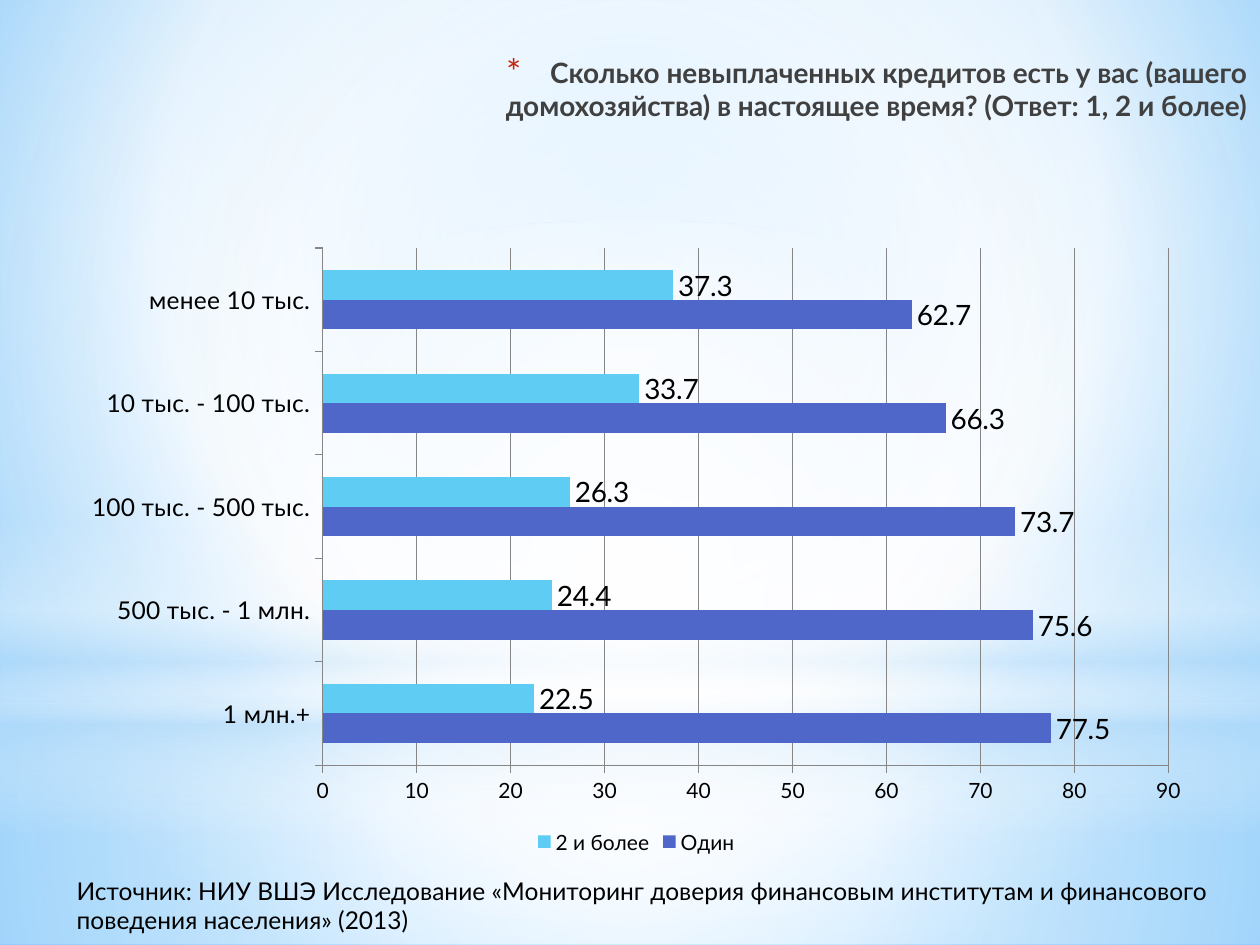
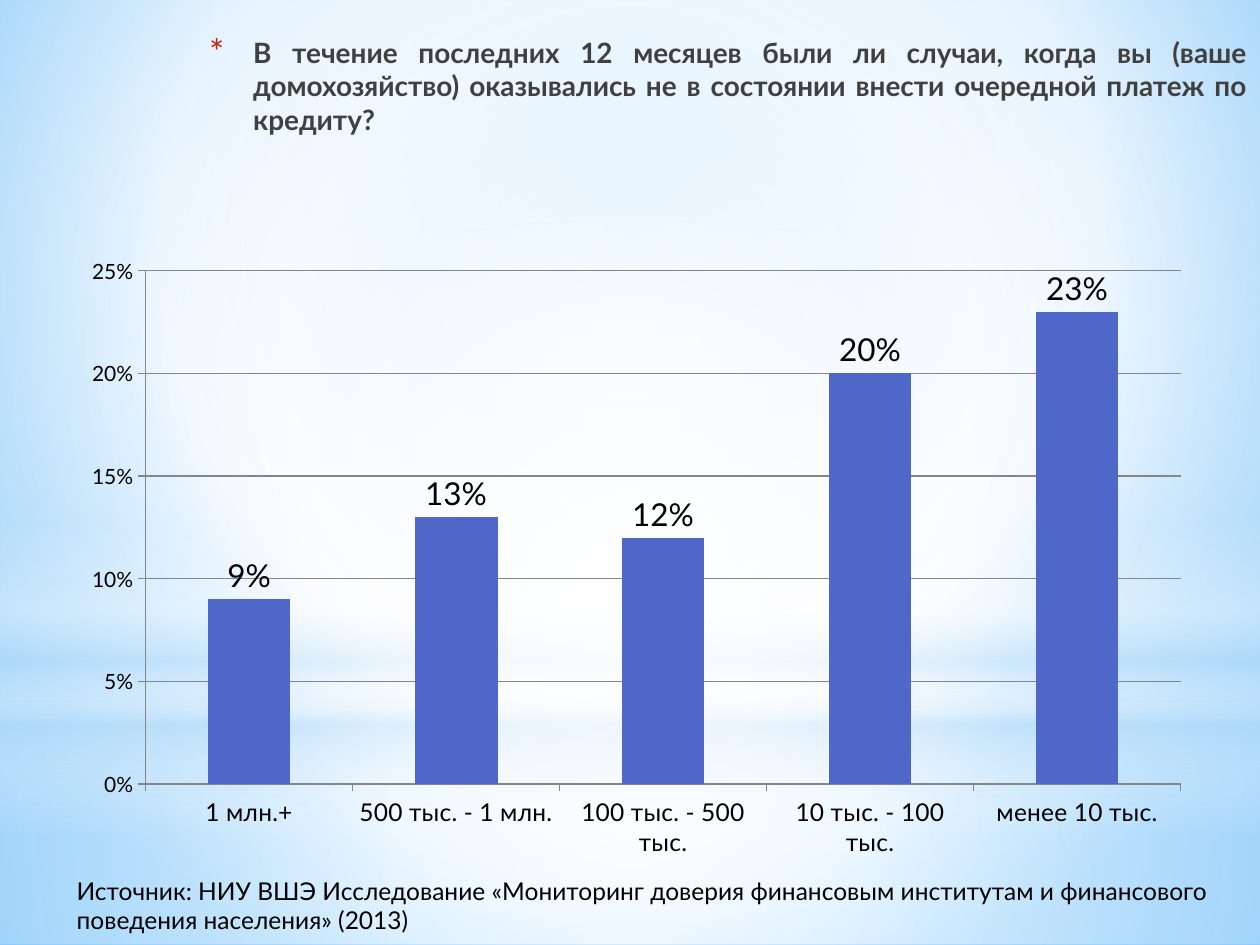
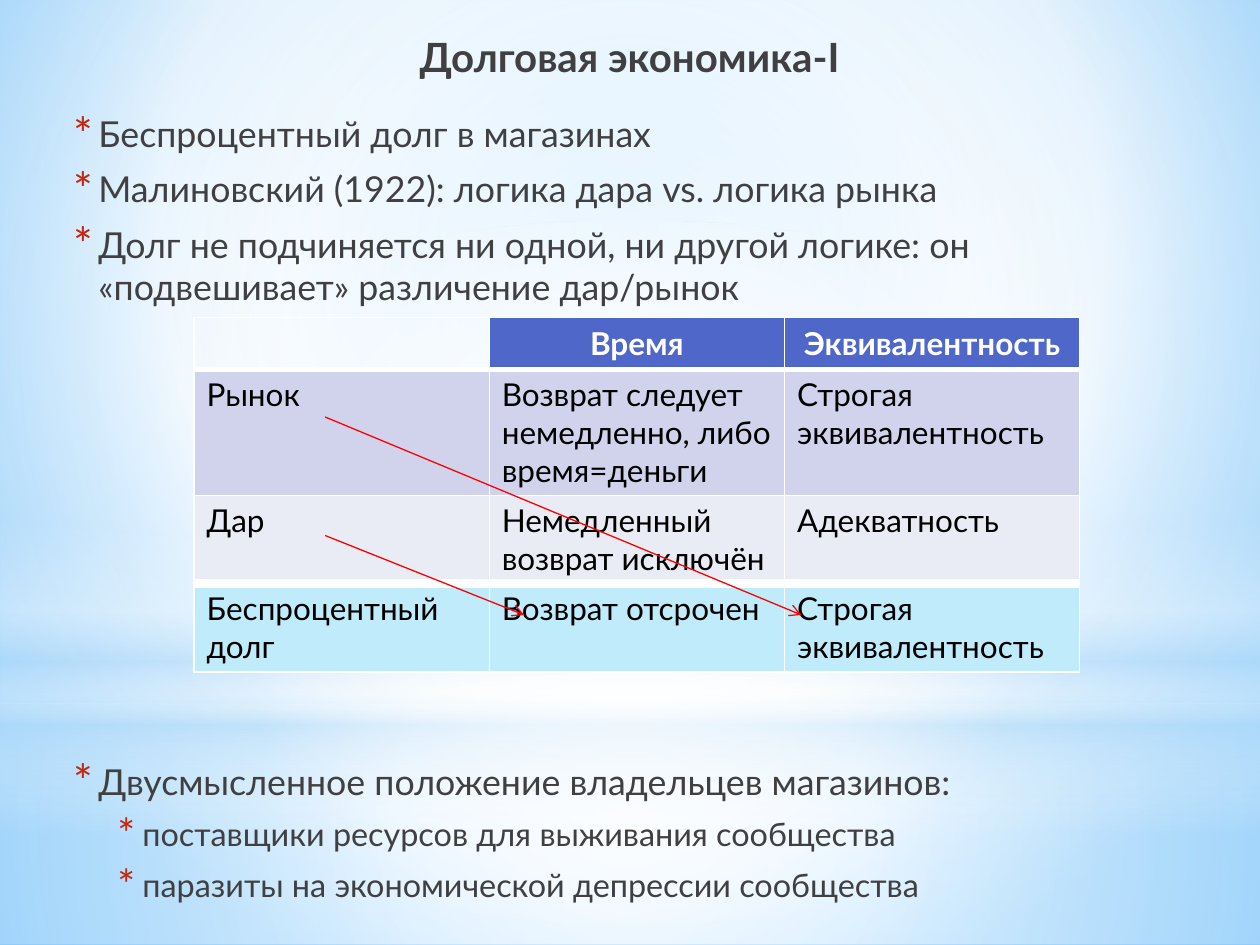
from dataclasses import dataclass

from lxml import etree
from pptx import Presentation
from pptx.chart.data import CategoryChartData
from pptx.dml.color import RGBColor
from pptx.enum.chart import XL_CHART_TYPE, XL_LABEL_POSITION, XL_LEGEND_POSITION, XL_TICK_MARK
from pptx.enum.shapes import MSO_CONNECTOR, MSO_SHAPE
from pptx.enum.text import MSO_ANCHOR, MSO_AUTO_SIZE, PP_ALIGN
from pptx.oxml.ns import qn
from pptx.util import Pt

BAR, COLUMN = XL_CHART_TYPE.BAR_CLUSTERED, XL_CHART_TYPE.COLUMN_CLUSTERED
OUTSIDE, BOTTOM = XL_LABEL_POSITION.OUTSIDE_END, XL_LEGEND_POSITION.BOTTOM
TICK = XL_TICK_MARK.OUTSIDE
RECT, OVAL, STRAIGHT = MSO_SHAPE.RECTANGLE, MSO_SHAPE.OVAL, MSO_CONNECTOR.STRAIGHT
TOP, FIXED = MSO_ANCHOR.TOP, MSO_AUTO_SIZE.NONE
LEFT, CENTER, RIGHT, JUSTIFY = PP_ALIGN.LEFT, PP_ALIGN.CENTER, PP_ALIGN.RIGHT, PP_ALIGN.JUSTIFY


@dataclass(frozen=True)
class Theme:
    face: str = "Lato"
    ink: RGBColor = RGBColor.from_string("404040")
    black: RGBColor = RGBColor.from_string("000000")
    white: RGBColor = RGBColor.from_string("FFFFFF")
    blue: RGBColor = RGBColor.from_string("4E67C8")
    sky: RGBColor = RGBColor.from_string("5ECCF3")
    gray: RGBColor = RGBColor.from_string("868686")
    red: RGBColor = RGBColor.from_string("FF0000")
    star: str = "C3260C"
    haze: str = "B4DCFA"
    rows: tuple = ("4E67C8", "D0D3EB", "E9EBF5", "BFEBFA")
    ask: float = 16
    head: float = 23
    body: float = 20.4
    sub: float = 18.5
    cell: float = 18
    note: float = 14
    axis: float = 12
    chart: float = 10


theme = Theme()


def shade(holder, stops, focus=None):
    """Swap the solid fill in holder for a gradient of (place, colour, alpha) stops."""
    grad = etree.Element(qn("a:gradFill"), rotWithShape="1")
    group = etree.SubElement(grad, qn("a:gsLst"))
    for place, color, alpha in stops:
        stop = etree.SubElement(group, qn("a:gs"), pos=str(place * 1000))
        tint = etree.SubElement(stop, qn("a:srgbClr"), val=color)
        if alpha < 100:
            etree.SubElement(tint, qn("a:alpha"), val=str(alpha * 1000))
    if focus:
        ring = etree.SubElement(grad, qn("a:path"), path="circle")
        sides = {side: str(part * 1000) for side, part in zip("ltrb", focus)}
        etree.SubElement(ring, qn("a:fillToRect"), **sides)
    else:
        etree.SubElement(grad, qn("a:lin"), ang="5400000", scaled="0")
    holder.replace(holder.find(qn("a:solidFill")), grad)


def style(par, size, color, bold=False, align=LEFT, star=None):
    """Format a paragraph; star is (left, hang, percent) of its bullet."""
    par.alignment = align
    if star:
        left, hang, scale = star
        prop = par._p.get_or_add_pPr()
        prop.set("marL", str(Pt(left)))
        prop.set("indent", str(-Pt(hang)))
        tint = etree.SubElement(prop, qn("a:buClr"))
        etree.SubElement(tint, qn("a:srgbClr"), val=theme.star)
        etree.SubElement(prop, qn("a:buSzPct"), val=str(scale * 1000))
        etree.SubElement(prop, qn("a:buFont"), typeface=theme.face)
        etree.SubElement(prop, qn("a:buChar"), char="*")
    font = par.font
    font.name, font.size, font.bold = theme.face, Pt(size), bold
    font.color.rgb = color


deck = Presentation()
deck.slide_width, deck.slide_height = Pt(720), Pt(540)
master = deck.slide_master

# Slides and their titles
ask = (25.2, 25.2, 128)
titles = [
    (5, (163.4, 28, 556.6, 90), theme.ask, RIGHT, ask,
     "Сколько невыплаченных кредитов есть у вас (вашего домохозяйства) "
     "в настоящее время? (Ответ: 1, 2 и более)"),
    (5, (112.3, 16.5, 607.7, 90), theme.ask, JUSTIFY, ask,
     "В течение последних 12 месяцев были ли случаи, когда вы (ваше домохозяйство) "
     "оказывались не в состоянии внести очередной платеж по кредиту?"),
    (1, (8.6, 15, 702.7, 90), theme.head, CENTER, None, "Долговая экономика-I"),
]
for layout, place, size, align, star, text in titles:
    slide = deck.slides.add_slide(deck.slide_layouts[layout])
    title = slide.shapes.title
    title.left, title.top, title.width, title.height = map(Pt, place)
    frame = title.text_frame
    frame.text = text
    frame.vertical_anchor, frame.auto_size = TOP, FIXED
    style(frame.paragraphs[0], size, theme.ink, True, align, star)

# Shared backdrop, moved to the master
master.background.fill.solid()
shade(master.element.find(".//" + qn("p:bgPr")),
      [(0, "9ED5FF", 100), (60, "FFFFFF", 100), (100, "5BB9FF", 100)], (20, 10, 20, 60))
white, haze, middle = "FFFFFF", theme.haze, (50, 50, 50, 50)
bands = [
    (RECT, 402, 138, [(0, white, 91), (37, white, 76), (100, haze, 79)], middle),
    (RECT, 0, 402, [(0, white, 89), (48, white, 62), (100, haze, 79)], middle),
    (RECT, 297, 180, [(0, white, 0), (29, white, 30), (45, haze, 40),
                      (55, white, 26), (65, haze, 60), (100, white, 0)], None),
    (OVAL, 126, 402, [(0, white, 100), (56, white, 0)], middle),
]
for n, (kind, top, height, stops, focus) in enumerate(bands):
    band = deck.slides[0].shapes.add_shape(kind, 0, Pt(top), Pt(720), Pt(height))
    band.shadow.inherit = False
    band.line.fill.background()
    band.fill.solid()
    shade(band.element.find(qn("p:spPr")), stops, focus)
    band.element.find(".//" + qn("p:cNvPr")).set("id", str(20 + n))
    master.shapes.element.insert(2 + n, band.element)

# Charts with their source notes
groups = ["1 млн.+", "500 тыс. - 1 млн.", "100 тыс. - 500 тыс.",
          "10 тыс. - 100 тыс.", "менее 10 тыс."]
source = ("Источник: НИУ ВШЭ Исследование «Мониторинг доверия финансовым институтам "
          "и финансового поведения населения» (2013)")
charts = [
    (BAR, 134.6, "General", 90, 10, 16,
     {"Один": [77.5, 75.6, 73.7, 66.3, 62.7], "2 и более": [22.5, 24.4, 26.3, 33.7, 37.3]}),
    (COLUMN, 140.4, "0%", 0.25, 0.05, 18, {"Series 1": [0.09, 0.13, 0.12, 0.2, 0.23]}),
]
for slide, (kind, top, form, peak, step, size, series) in zip(deck.slides, charts):
    data = CategoryChartData(number_format=form)
    data.categories = groups
    for name, values in series.items():
        data.add_series(name, values)
    chart = slide.shapes.add_chart(kind, Pt(39.6), Pt(top), Pt(648), Pt(356.4), data).chart
    chart.font.name, chart.font.size = theme.face, Pt(theme.chart)
    chart.font.color.rgb = theme.black
    chart.has_title = False
    chart.has_legend = len(series) > 1
    if chart.has_legend:
        chart.legend.position = BOTTOM
        chart.legend.include_in_layout = False
        chart.legend.font.size = Pt(theme.axis)

    plot = chart.plots[0]
    plot.gap_width, plot.overlap, plot.vary_by_categories = 150, 0, False
    for bar, color in zip(plot.series, (theme.blue, theme.sky)):
        bar.format.fill.solid()
        bar.format.fill.fore_color.rgb = color
        bar.invert_if_negative = False
        labels = bar.data_labels
        labels.show_value, labels.position = True, OUTSIDE
        labels.number_format, labels.number_format_is_linked = form, False
        labels.font.size = Pt(size)

    scale = chart.value_axis
    scale.minimum_scale, scale.maximum_scale, scale.major_unit = 0, peak, step
    scale.has_major_gridlines = True
    scale.tick_labels.number_format = form
    scale.tick_labels.number_format_is_linked = False
    for axis, points in ((chart.category_axis, theme.note), (scale, theme.axis)):
        axis.major_tick_mark = TICK
        axis.tick_labels.font.size = Pt(points)
        axis.format.line.color.rgb = theme.gray
    scale.major_gridlines.format.line.color.rgb = theme.gray

    note = slide.shapes.add_textbox(Pt(36.7), Pt(496.8), Pt(663), Pt(41)).text_frame
    note.word_wrap = True
    note.text = source
    style(note.paragraphs[0], theme.note, theme.black)

# Debt slide: list, with a gap left for the table
slide = deck.slides[2]
body = slide.placeholders[1]
body.left, body.top, body.width, body.height = map(Pt, (31, 60.5, 663, 442))
frame = body.text_frame
frame.vertical_anchor, frame.auto_size = TOP, FIXED
points = [
    (0, 4, "Беспроцентный долг в магазинах"),
    (0, 4, "Малиновский (1922): логика дара vs. логика рынка"),
    (0, 4, "Долг не подчиняется ни одной, ни другой логике: он "
           "«подвешивает» различение дар/рынок"),
    (0, 255, "Двусмысленное положение владельцев магазинов:"),
    (1, 3.7, "поставщики ресурсов для выживания сообщества"),
    (1, 3.7, "паразиты на экономической депрессии сообщества"),
]
frame.text = "\n".join(text for level, gap, text in points)
for par, (level, gap, text) in zip(frame.paragraphs, points):
    par.level = level
    par.space_before, par.space_after = Pt(gap), Pt(3)
    style(par, (theme.body, theme.sub)[level], theme.ink, star=((18, 43.2)[level], 14.4, 130))

# Debt table
cells = [
    ["", "Время", "Эквивалентность"],
    ["Рынок", "Возврат следует немедленно, либо время=деньги", "Строгая эквивалентность"],
    ["Дар", "Немедленный возврат исключён", "Адекватность"],
    ["Беспроцентный долг", "Возврат отсрочен", "Строгая эквивалентность"],
]
grid = slide.shapes.add_table(4, 3, Pt(110.9), Pt(181.5), Pt(506.1), Pt(202.3))
table = grid.table
table.horz_banding = False
for column in table.columns:
    column.width = Pt(168.7)
for r, height in enumerate((29.5, 72, 50.4, 50.4)):
    table.rows[r].height = Pt(height)
    for c, text in enumerate(cells[r]):
        cell = table.cell(r, c)
        if not text:
            cell.fill.background()
            continue
        cell.fill.solid()
        cell.fill.fore_color.rgb = RGBColor.from_string(theme.rows[r])
        cell.text = text
        head = r == 0
        style(cell.text_frame.paragraphs[0], theme.cell,
              theme.white if head else theme.black, head, CENTER if head else LEFT)

# White rules: thick under the header and above the last row
rules = (1, 3, 1, 6, 1)
for n, prop in enumerate(grid.element.iter(qn("a:tcPr"))):
    if n == 0:
        continue
    row = n // 3
    for k, (side, width) in enumerate(zip("LRTB", (1, 1, rules[row], rules[row + 1]))):
        edge = etree.Element(qn("a:ln" + side), w=str(Pt(width)))
        tint = etree.SubElement(edge, qn("a:solidFill"))
        etree.SubElement(tint, qn("a:srgbClr"), val=white)
        prop.insert(k, edge)

# Arrows from market and gift to debt
for start, end in (((185.8, 238.3), (457.9, 351.4)), ((185.8, 306), (299.5, 351.4))):
    arrow = slide.shapes.add_connector(STRAIGHT, *map(Pt, start + end))
    arrow.line.color.rgb, arrow.line.width = theme.red, Pt(0.75)
    etree.SubElement(arrow.element.find(".//" + qn("a:ln")), qn("a:tailEnd"), type="arrow")
    etree.SubElement(arrow.element.find(qn("p:spPr")), qn("a:effectLst"))

deck.save("out.pptx")
